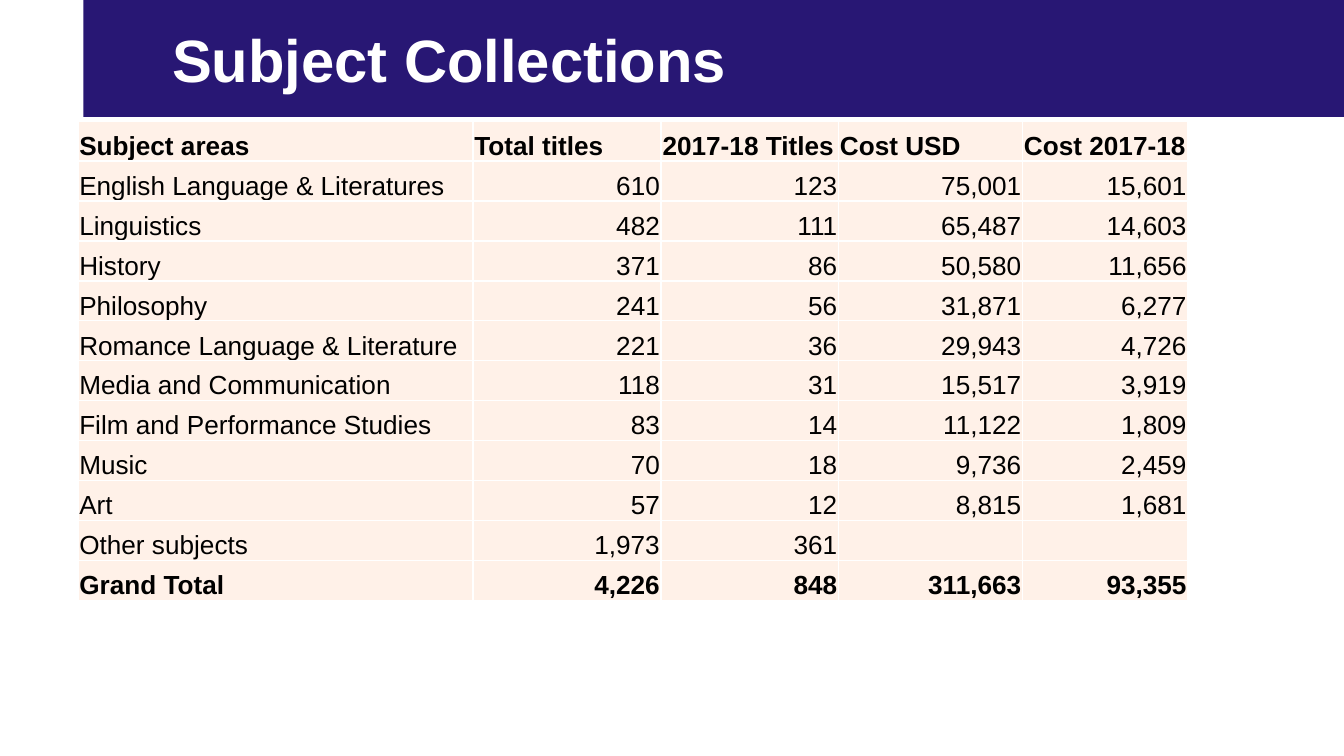
from lxml import etree
from pptx import Presentation
from pptx.dml.color import RGBColor
from pptx.enum import text as t
from pptx.oxml import ns
from pptx.util import Inches, Pt

HUES = {"band": "281774", "cell": "FFF1E8", "line": "FFFFFF", "head": "FFFFFF", "ink": "000000"}
WIDTHS = [2.94, 1.4, 1.32, 1.37, 1.23]
ROWS = [
    ["Subject areas", "Total titles", "2017-18 Titles", "Cost USD", "Cost 2017-18"],
    ["English Language & Literatures", "610", "123", "75,001", "15,601"],
    ["Linguistics", "482", "111", "65,487", "14,603"],
    ["History", "371", "86", "50,580", "11,656"],
    ["Philosophy", "241", "56", "31,871", "6,277"],
    ["Romance Language & Literature", "221", "36", "29,943", "4,726"],
    ["Media and Communication", "118", "31", "15,517", "3,919"],
    ["Film and Performance Studies", "83", "14", "11,122", "1,809"],
    ["Music", "70", "18", "9,736", "2,459"],
    ["Art", "57", "12", "8,815", "1,681"],
    ["Other subjects", "1,973", "361", "", ""],
    ["Grand Total", "4,226", "848", "311,663", "93,355"],
]


def hue(name):
    """Return the named colour."""
    return RGBColor.from_string(HUES[name])


def write(frame, words, size=14, color="ink", bold=False, align=t.PP_ALIGN.LEFT):
    """Put one formatted paragraph in a text frame."""
    para = frame.paragraphs[0]
    para.alignment = align
    run = para.add_run()
    run.text = words
    run.font.name = "Arial"
    run.font.size = Pt(size)
    run.font.bold = bold
    run.font.color.rgb = hue(color)


def edge(cell):
    """Draw a thin line on all four sides of a cell."""
    props = cell._tc.get_or_add_tcPr()
    for side in ("lnL", "lnR", "lnT", "lnB"):
        line = etree.SubElement(props, ns.qn(f"a:{side}"), w=str(Pt(1)))
        fill = etree.SubElement(line, ns.qn("a:solidFill"))
        etree.SubElement(fill, ns.qn("a:srgbClr"), val=HUES["line"])


def banner(slide, left, top, width, height):
    """Place the title on its coloured band."""
    title = slide.shapes.title
    title.left, title.top = Inches(left), Inches(top)
    title.width, title.height = Inches(width), Inches(height)
    title.fill.solid()
    title.fill.fore_color.rgb = hue("band")
    frame = title.text_frame
    frame.auto_size = t.MSO_AUTO_SIZE.NONE
    frame.vertical_anchor = t.MSO_ANCHOR.MIDDLE
    frame.margin_left = Inches(0.66)
    write(frame, "Subject Collections", size=32, color="head", bold=True)


def grid(slide, left, top, width, height):
    """Place the table of subjects, sharing the width by column."""
    table = slide.shapes.add_table(
        len(ROWS), len(WIDTHS), Inches(left), Inches(top), Inches(width), Inches(height)
    ).table
    table.first_row = table.horz_banding = False
    for col, part in zip(table.columns, WIDTHS):
        col.width = Inches(width * part / sum(WIDTHS))
    for r, row in enumerate(ROWS):
        table.rows[r].height = Inches(height / len(ROWS))
        for c, words in enumerate(row):
            cell = table.cell(r, c)
            edge(cell)
            cell.fill.solid()
            cell.fill.fore_color.rgb = hue("cell")
            cell.vertical_anchor = t.MSO_ANCHOR.BOTTOM
            cell.margin_left = cell.margin_right = cell.margin_top = Inches(0.01)
            cell.margin_bottom = 0
            align = t.PP_ALIGN.RIGHT if r and c else t.PP_ALIGN.LEFT
            write(cell.text_frame, words, bold=r in (0, len(ROWS) - 1), align=align)


def main():
    """Build and save the slide."""
    deck = Presentation()
    deck.slide_width = Inches(10)
    deck.slide_height = deck.slide_width * 9 // 16
    slide = deck.slides.add_slide(deck.slide_layouts[5])
    banner(slide, 0.62, 0, 9.38, 0.87)
    grid(slide, 0.58, 0.9, 8.26, 3.57)
    deck.save("out.pptx")


if __name__ == "__main__":
    main()
